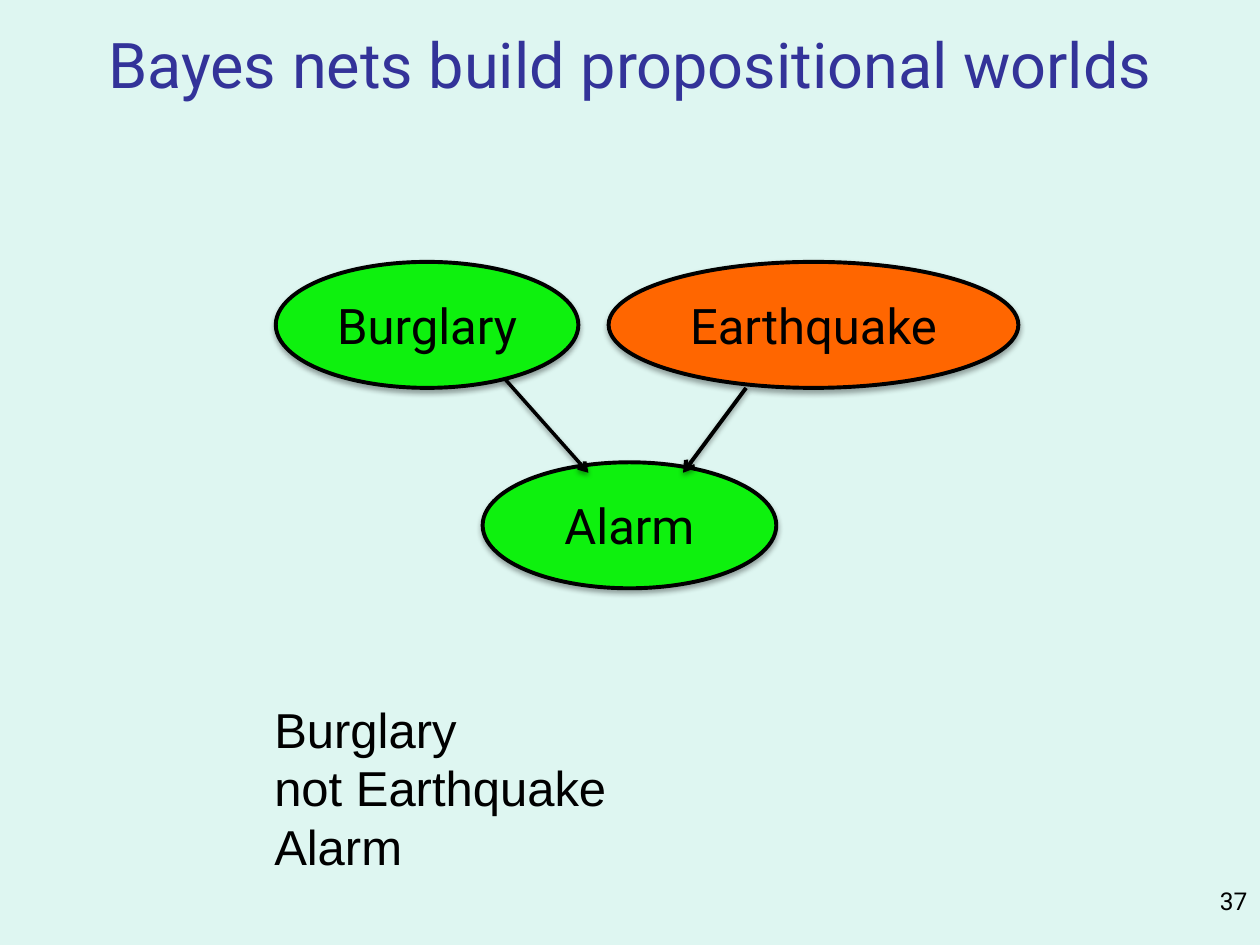
from dataclasses import dataclass

from lxml.etree import SubElement
from pptx import Presentation
from pptx.dml.color import RGBColor
from pptx.enum.shapes import MSO_CONNECTOR as Connector, MSO_SHAPE as Shape
from pptx.enum.text import MSO_ANCHOR as Anchor, MSO_AUTO_SIZE as AutoSize, PP_ALIGN as Align
from pptx.oxml.ns import qn
from pptx.util import Cm, Pt


@dataclass(frozen=True)
class Theme:
    background: str = "DEF6F1"
    title: str = "333399"
    ink: str = "000000"
    true_node: str = "0EF10E"
    false_node: str = "FF6600"
    font: str = "Roboto"
    list_font: str = "Arial"
    title_size: int = 36
    body_size: int = 28
    number_size: int = 14
    outline: float = 2.25


THEME = Theme()
TITLE_ONLY = 5
NODE_HEIGHT = 2.54

# name: left, top, width (cm inside the network box), fill
NODES = {
    "Burglary": (0, 0, 6.1, THEME.true_node),
    "Alarm": (4.17, 4.04, 5.92, THEME.true_node),
    "Earthquake": (6.71, 0, 8.26, THEME.false_node),
}
# start x, start y, end x, end y (cm inside the network box), line width
ARROWS = [(4.6, 2.34, 6.3, 4.25, 2), (9.48, 2.54, 8.21, 4.25, THEME.outline)]
WORLD = ["Burglary", "not Earthquake", "Alarm"]


def color(code):
    return RGBColor.from_string(code)


def format_text(frame, size, align, font=THEME.font, ink=THEME.ink):
    for paragraph in frame.paragraphs:
        paragraph.alignment = align
        for run in paragraph.runs:
            run.font.name = font
            run.font.size = Pt(size)
            run.font.color.rgb = color(ink)


def add_shadow(properties, distance, opacity):
    """Soft shadow straight below; distance in points, opacity in percent."""
    effects = properties.find(qn("a:effectLst"))
    if effects is None:
        effects = SubElement(properties, qn("a:effectLst"))
    shadow = SubElement(effects, qn("a:outerShdw"), blurRad=str(Pt(3.1)),
                        dist=str(Pt(distance)), dir="5400000", rotWithShape="0")
    tint = SubElement(shadow, qn("a:srgbClr"), val=THEME.ink)
    SubElement(tint, qn("a:alpha"), val=str(opacity * 1000))


def add_title(slide, left, top, width, height):
    title = slide.shapes.title
    title.left, title.top, title.width, title.height = map(Cm, (left, top, width, height))
    frame = title.text_frame
    frame.text = "Bayes nets build propositional worlds"
    frame.vertical_anchor = Anchor.MIDDLE
    format_text(frame, THEME.title_size, Align.CENTER, ink=THEME.title)


def add_page_number(slide, left, top, width, height):
    number = slide.shapes.add_textbox(*map(Cm, (left, top, width, height)))
    number.text_frame.word_wrap = True
    number.text_frame.text = "37"
    format_text(number.text_frame, THEME.number_size, Align.RIGHT)


def add_network(slide, left, top):
    # Variables of the net
    for name, (x, y, width, fill) in NODES.items():
        node = slide.shapes.add_shape(
            Shape.OVAL, Cm(left + x), Cm(top + y), Cm(width), Cm(NODE_HEIGHT))
        node.fill.solid()
        node.fill.fore_color.rgb = color(fill)
        node.line.color.rgb = color(THEME.ink)
        node.line.width = Pt(THEME.outline)
        node.shadow.inherit = False
        add_shadow(node.element.spPr, 1.8, 35)
        frame = node.text_frame
        frame.text = name
        frame.word_wrap = False
        frame.vertical_anchor = Anchor.MIDDLE
        format_text(frame, THEME.body_size, Align.CENTER)

    # Causes pointing to the alarm
    for x1, y1, x2, y2, width in ARROWS:
        arrow = slide.shapes.add_connector(
            Connector.STRAIGHT, Cm(left + x1), Cm(top + y1), Cm(left + x2), Cm(top + y2))
        arrow.line.color.rgb = color(THEME.ink)
        arrow.line.width = Pt(width)
        properties = arrow.element.spPr
        SubElement(properties.find(qn("a:ln")), qn("a:tailEnd"), type="arrow")
        add_shadow(properties, 1.6, 38)


def add_world(slide, left, top, width, height):
    world = slide.shapes.add_textbox(*map(Cm, (left, top, width, height)))
    frame = world.text_frame
    frame.text = "\n".join(WORLD)
    frame.word_wrap = False
    frame.auto_size = AutoSize.SHAPE_TO_FIT_TEXT
    format_text(frame, THEME.body_size, Align.LEFT, THEME.list_font)


def main():
    deck = Presentation()
    deck.slide_width, deck.slide_height = Cm(25.4), Cm(19.05)
    slide = deck.slides.add_slide(deck.slide_layouts[TITLE_ONLY])
    slide.background.fill.solid()
    slide.background.fill.fore_color.rgb = color(THEME.background)

    add_title(slide, 0, 0, 25.4, 2.54)
    add_page_number(slide, 23.29, 17.73, 2.11, 1.32)
    add_network(slide, 5.56, 5.28)
    add_world(slide, 5.28, 13.97, 7.26, 3.84)
    deck.save("out.pptx")


if __name__ == "__main__":
    main()
